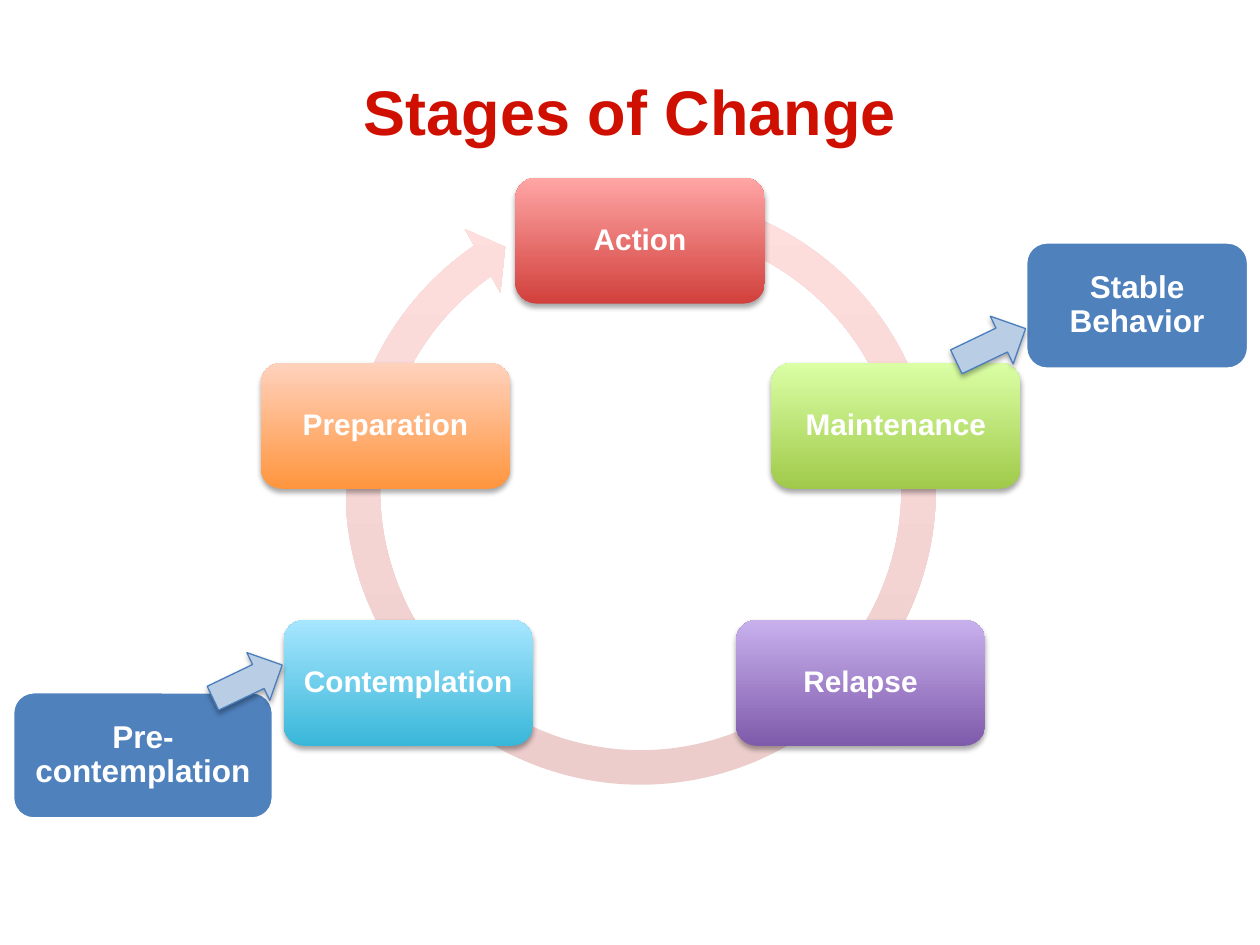
from lxml import etree
from pptx import Presentation
from pptx import util as u
from pptx.dml import color
from pptx.enum import shapes, text
from pptx.oxml import ns

In = u.Inches
KIND = shapes.MSO_SHAPE
HEX = {
    "title": "CF1001", "white": "FFFFFF", "blue": "4F81BD",
    "pale": "B9CDE5", "edge": "4B7EBC", "shade": "000000",
}
# Gradients from bottom to top
FADE = {
    "ring": ("ECCDCC", "FFDFDE"), "red": ("D1403C", "FFA6A5"),
    "green": ("A0CA4A", "DAFFA5"), "purple": ("7F5BAB", "C8B0ED"),
    "cyan": ("39B7D8", "A7E6FF"), "orange": ("FF953E", "FFD2BD"),
}
# Label, left, top, gradient
STAGES = [
    ("Action", 4.09, 1.41, "red"),
    ("Maintenance", 6.12, 2.88, "green"),
    ("Relapse", 5.84, 4.92, "purple"),
    ("Contemplation", 2.25, 4.92, "cyan"),
    ("Preparation", 2.07, 2.88, "orange"),
]
# Label, left, top, width
ENDS = [
    ("Pre-contemplation", 0.1, 5.49, 2.07),
    ("Stable Behavior", 8.14, 1.92, 1.77),
]
ARROWS = [(1.66, 5.2), (7.56, 2.53)]


def rgb(name):
    return color.RGBColor.from_string(HEX[name])


def add_form(slide, kind, x, y, w, h):
    form = slide.shapes.add_shape(kind, In(x), In(y), In(w), In(h))
    form.shadow.inherit = False
    form.line.fill.background()
    return form


def set_fade(form, name):
    form.fill.gradient()
    form.fill.gradient_angle = 90
    for stop, tone in zip(form.fill.gradient_stops, FADE[name]):
        stop.color.rgb = color.RGBColor.from_string(tone)


def set_solid(form, fill, line, width):
    form.fill.solid()
    form.fill.fore_color.rgb = rgb(fill)
    form.line.color.rgb = rgb(line)
    form.line.width = u.Pt(width)


def add_shade(form):
    """Put a soft shadow below the shape."""
    group = form.element.spPr.find(ns.qn("a:effectLst"))
    shade = etree.SubElement(
        group, ns.qn("a:outerShdw"), blurRad=str(u.Pt(3.1)),
        dist=str(u.Pt(1.8)), dir="5400000", rotWithShape="0")
    tone = etree.SubElement(shade, ns.qn("a:srgbClr"), val=HEX["shade"])
    etree.SubElement(tone, ns.qn("a:alpha"), val="35000")


def write(form, label, size, tone="white", space=0.9, inset=None):
    frame = form.text_frame
    frame.word_wrap = True
    frame.vertical_anchor = text.MSO_ANCHOR.MIDDLE
    if inset is not None:
        frame.margin_left = frame.margin_right = In(inset)
        frame.margin_top = frame.margin_bottom = In(inset)
    para = frame.paragraphs[0]
    para.alignment = text.PP_ALIGN.CENTER
    para.line_spacing = space
    run = para.add_run()
    run.text = label
    run.font.name = "Arial"
    run.font.size = u.Pt(size)
    run.font.bold = True
    run.font.color.rgb = rgb(tone)


def add_ring(slide):
    ring = add_form(slide, KIND.CIRCULAR_ARROW, 2.59, 1.39, 4.99, 4.99)
    for i, value in enumerate((0.055, 3.307, 141.19, 171.805, 0.058)):
        ring.adjustments[i] = value
    set_fade(ring, "ring")


def add_stage(slide, label, x, y, fade):
    box = add_form(slide, KIND.ROUNDED_RECTANGLE, x, y, 1.98, 1)
    set_fade(box, fade)
    add_shade(box)
    write(box, label, 17, inset=0.07)


def add_end(slide, label, x, y, w):
    box = add_form(slide, KIND.ROUNDED_RECTANGLE, x, y, w, 1.01)
    set_solid(box, "blue", "white", 2)
    write(box, label, 18, inset=0.08)


def add_arrow(slide, x, y):
    arrow = add_form(slide, KIND.RIGHT_ARROW, x, y, 0.61, 0.42)
    arrow.rotation = 334.4
    set_solid(arrow, "pale", "edge", 0.75)
    add_shade(arrow)


def add_title(slide):
    box = slide.shapes.add_textbox(In(0.5), In(0.25), In(9), In(1.25))
    write(box, "Stages of Change", 36, tone="title", space=1)


def main():
    deck = Presentation()
    deck.slide_width, deck.slide_height = In(10), In(7.5)
    slide = deck.slides.add_slide(deck.slide_layouts[6])

    # Cycle
    add_ring(slide)
    for stage in STAGES:
        add_stage(slide, *stage)

    # Way in and way out
    for end in ENDS:
        add_end(slide, *end)
    for spot in ARROWS:
        add_arrow(slide, *spot)

    add_title(slide)
    deck.save("out.pptx")


if __name__ == "__main__":
    main()
